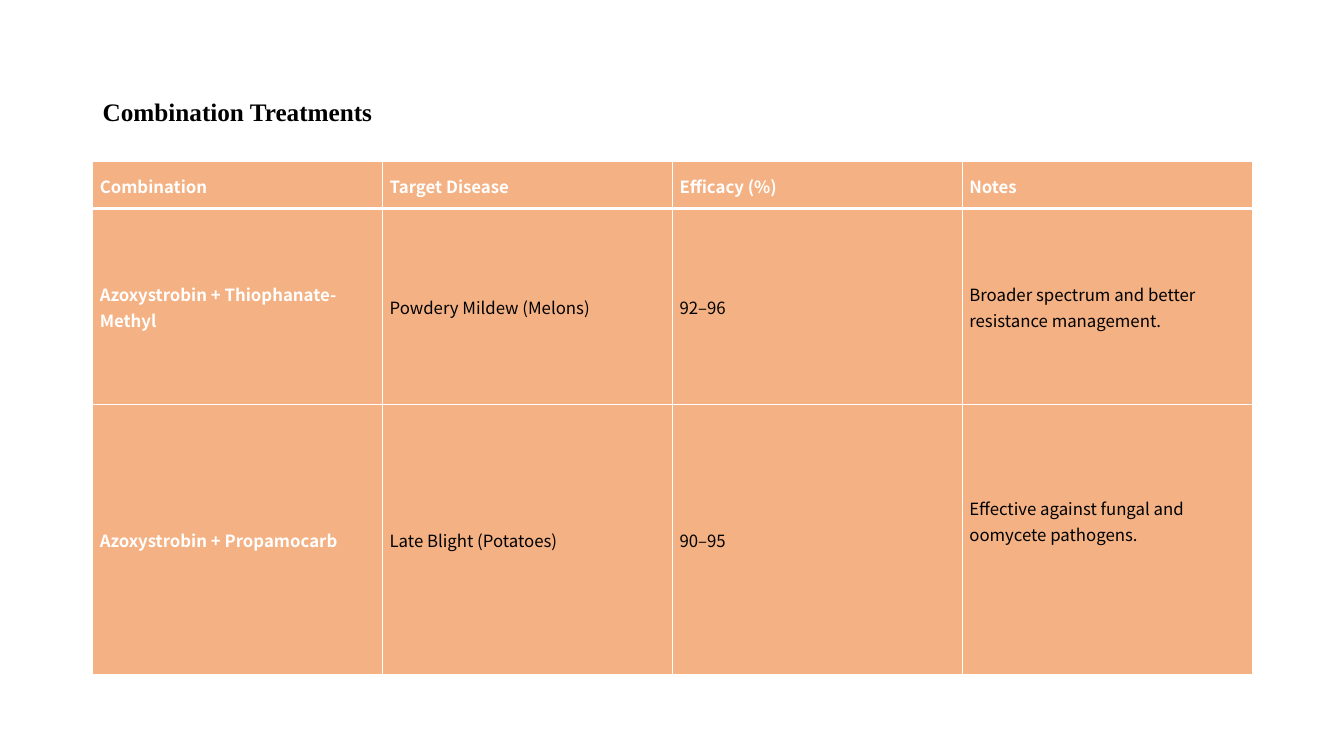
"""Build a slide with a table of combination treatments."""
from lxml import etree
from pptx import Presentation
from pptx import util as u
from pptx.dml.color import RGBColor
from pptx.enum import text
from pptx.oxml.ns import qn

COLORS = {"text": "000000", "light": "FFFFFF", "cell": "F4B183"}
ROWS = [
    ["Combination", "Target Disease", "Efficacy (%)", "Notes"],
    ["Azoxystrobin + Thiophanate-Methyl", "Powdery Mildew (Melons)", "92–96",
     "Broader spectrum and better resistance management."],
    ["Azoxystrobin + Propamocarb", "Late Blight (Potatoes)", "90–95",
     "Effective against fungal and oomycete pathogens."],
]
HEIGHTS = [0.47, 1.94, 2.68]
LEFT, TOP, WIDTH = 0.92, 1.6, 11.5


def style_text(p, font, size, color, bold):
    p.font.name = font
    p.font.size = u.Pt(size)
    p.font.bold = bold
    p.font.color.rgb = RGBColor.from_string(COLORS[color])


def add_border(cell, side, width):
    ln = etree.SubElement(cell._tc.get_or_add_tcPr(), qn(f"a:ln{side}"), w=str(u.Pt(width)))
    fill = etree.SubElement(ln, qn("a:solidFill"))
    etree.SubElement(fill, qn("a:srgbClr"), val=COLORS["light"])


prs = Presentation()
prs.slide_width, prs.slide_height = u.Inches(13.33), u.Inches(7.5)
slide = prs.slides.add_slide(prs.slide_layouts[6])

title = slide.shapes.add_textbox(u.Inches(LEFT), u.Inches(0.4), u.Inches(WIDTH), u.Inches(1.45))
tf = title.text_frame
tf.word_wrap = True
tf.vertical_anchor = text.MSO_ANCHOR.MIDDLE
p = tf.paragraphs[0]
p.text = "Combination Treatments"
p.line_spacing = 0.9
style_text(p, "Times New Roman", 18, "text", True)

table = slide.shapes.add_table(len(ROWS), len(ROWS[0]), u.Inches(LEFT), u.Inches(TOP),
                               u.Inches(WIDTH), u.Inches(sum(HEIGHTS))).table
table.first_col = True
table.horz_banding = False
for i, (row, height) in enumerate(zip(ROWS, HEIGHTS)):
    table.rows[i].height = u.Inches(height)
    for j, label in enumerate(row):
        cell = table.cell(i, j)
        for side, width in {"L": 1, "R": 1, "T": 3 if i == 1 else 1, "B": 3 if i == 0 else 1}.items():
            add_border(cell, side, width)
        cell.fill.solid()
        cell.fill.fore_color.rgb = RGBColor.from_string(COLORS["cell"])
        cell.vertical_anchor = text.MSO_ANCHOR.MIDDLE
        cell.margin_left = cell.margin_right = u.Inches(0.07)
        cell.margin_top = cell.margin_bottom = 0
        p = cell.text_frame.paragraphs[0]
        p.text = label
        p.line_spacing = 1.07
        p.space_after = u.Pt(8)
        heading = i == 0 or j == 0
        style_text(p, "Noto Sans CJK SC", 12, "light" if heading else "text", heading)
table.cell(2, 3).margin_bottom = u.Inches(0.37)

prs.save("out.pptx")
